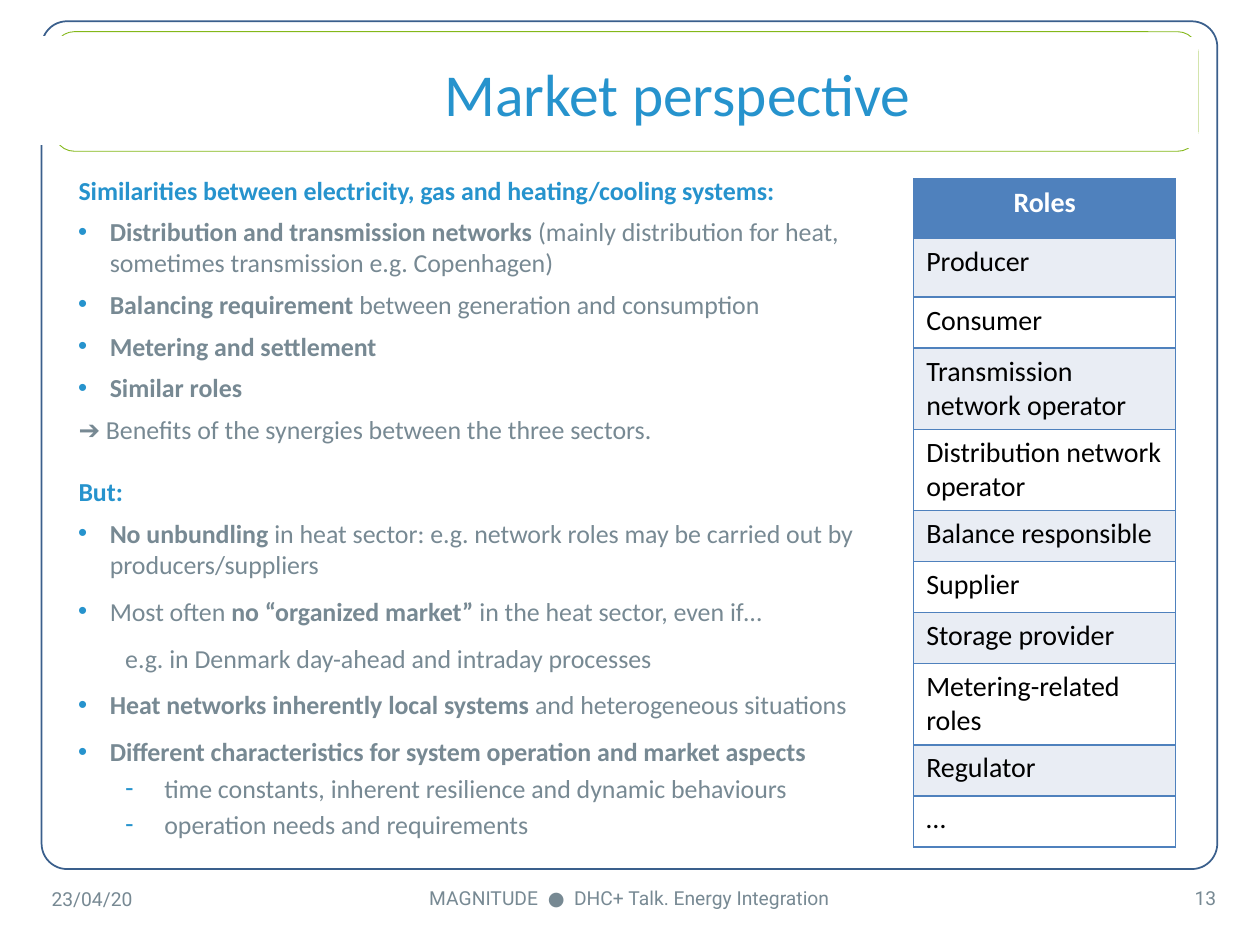
"""Build the market perspective slide with its role table."""
from dataclasses import dataclass

from lxml import etree
from pptx import Presentation
from pptx.dml.color import RGBColor
from pptx.enum.shapes import MSO_SHAPE
from pptx.enum.text import MSO_ANCHOR, MSO_AUTO_SIZE, PP_ALIGN
from pptx.oxml.ns import qn
from pptx.util import Cm, Pt

LEFT, CENTER, RIGHT = PP_ALIGN.LEFT, PP_ALIGN.CENTER, PP_ALIGN.RIGHT
MIDDLE, NO_FIT = MSO_ANCHOR.MIDDLE, MSO_AUTO_SIZE.NONE
RECT, ROUND = MSO_SHAPE.RECTANGLE, MSO_SHAPE.ROUNDED_RECTANGLE


@dataclass(frozen=True)
class Theme:
    """Colours, fonts and type sizes of the slide."""
    blue: str = "2693CD"
    grey: str = "778993"
    white: str = "FFFFFF"
    black: str = "000000"
    green: str = "84B819"
    navy: str = "3A5F8C"
    head: str = "4F81BD"
    band: str = "E9EDF4"
    main: str = "Calibri"
    small: str = "Roboto"
    title_size: float = 34
    body_size: float = 14.8
    cell_size: float = 16
    foot_size: float = 11


@dataclass(frozen=True)
class Box:
    """Place and size in centimetres."""
    left: float
    top: float
    width: float
    height: float

    def emu(self) -> tuple:
        return Cm(self.left), Cm(self.top), Cm(self.width), Cm(self.height)


@dataclass(frozen=True)
class Frame:
    """An outlined panel behind the text."""
    shape: int
    box: Box
    line: str
    weight: float
    fill: str = ""
    curve: float = 0.17


@dataclass(frozen=True)
class Style:
    """Indent, bullet and colour of a list line."""
    margin: float
    indent: float = 0
    mark: str = ""
    level: int = 0
    color: str = Theme.grey


@dataclass(frozen=True)
class Item:
    """A list line with an optional bold part in the middle."""
    style: Style
    gap: float
    lead: str = ""
    bold: str = ""
    rest: str = ""


@dataclass(frozen=True)
class Note:
    """A small text at the foot of the slide."""
    text: str
    box: Box
    align: int


THEME = Theme()
HEAD = Style(0.33, color=THEME.blue)
PLAIN = Style(0.33)
POINT = Style(0.96, -0.64, "•")
ASIDE = Style(1.27, level=1)
DASH = Style(2.06, -0.79, "-", 1)

FRAMES = [
    Frame(ROUND, Box(1.09, 0.64, 23.06, 2.41), THEME.green, 0.5, THEME.white),
    Frame(ROUND, Box(0.84, 0.43, 23.7, 17.09), THEME.navy, 1, curve=0.03),
    Frame(RECT, Box(0.28, 0.76, 1.19, 2.13), THEME.white, 2, THEME.white),
]
ITEMS = [
    Item(HEAD, 0, bold="Similarities between electricity, gas and heating/cooling systems:"),
    Item(POINT, 6, bold="Distribution and transmission networks ",
         rest="(mainly distribution for heat, sometimes transmission e.g. Copenhagen)"),
    Item(POINT, 6, bold="Balancing requirement ", rest="between generation and consumption"),
    Item(POINT, 6, bold="Metering and settlement"),
    Item(POINT, 6, bold="Similar roles"),
    Item(PLAIN, 6, "➔ Benefits of the synergies between the three sectors."),
    Item(HEAD, 18, bold="But:"),
    Item(POINT, 6, bold="No unbundling ",
         rest="in heat sector: e.g. network roles may be carried out by producers/suppliers"),
    Item(POINT, 9, "Most often ", "no “organized market” ", "in the heat sector, even if…"),
    Item(ASIDE, 9, "e.g. in Denmark day-ahead and intraday processes"),
    Item(POINT, 9, bold="Heat networks inherently local systems ",
         rest="and heterogeneous situations"),
    Item(POINT, 9, bold="Different characteristics for system operation and market aspects"),
    Item(DASH, 3, "time constants, inherent resilience and dynamic behaviours"),
    Item(DASH, 3, "operation needs and requirements"),
]
TALL, LOW, DOUBLE = 1.19, 1.03, 1.63
ROLES = [
    ("Roles", TALL), ("Producer", TALL), ("Consumer", LOW),
    ("Transmission network operator", DOUBLE), ("Distribution network operator", DOUBLE),
    ("Balance responsible", LOW), ("Supplier", LOW), ("Storage provider", LOW),
    ("Metering-related roles", DOUBLE), ("Regulator", LOW), ("…", LOW),
]
NOTES = [
    Note("23/04/20", Box(0.79, 17.6, 3.18, 1.02), LEFT),
    Note("MAGNITUDE  ●  DHC+ Talk. Energy Integration", Box(7.24, 17.58, 10.9, 1.02), CENTER),
    Note("13", Box(21.39, 17.58, 3.38, 1.02), RIGHT),
]


def rgb(code: str) -> RGBColor:
    return RGBColor.from_string(code)


def set_font(run, face: str, size: float, color: str, bold: bool = False) -> None:
    font = run.font
    font.name, font.size, font.bold = face, Pt(size), bold
    font.color.rgb = rgb(color)


def paint(shape, fill: str, line: str, weight: float) -> None:
    if fill:
        shape.fill.solid()
        shape.fill.fore_color.rgb = rgb(fill)
    else:
        shape.fill.background()
    shape.line.color.rgb = rgb(line)
    shape.line.width = Pt(weight)


def draw_frame(slide, frame: Frame) -> None:
    shape = slide.shapes.add_shape(frame.shape, *frame.box.emu())
    shape.shadow.inherit = False
    if frame.shape == ROUND:
        shape.adjustments[0] = frame.curve
    paint(shape, frame.fill, frame.line, frame.weight)


def place(holder, box: Box, curve: float) -> None:
    """Move a placeholder to the front and round its corners."""
    holder.left, holder.top, holder.width, holder.height = box.emu()
    shape = etree.SubElement(holder.element.spPr, qn("a:prstGeom"), prst="roundRect")
    guides = etree.SubElement(shape, qn("a:avLst"))
    etree.SubElement(guides, qn("a:gd"), name="adj", fmla=f"val {round(curve * 100000)}")
    holder.element.getparent().append(holder.element)
    holder.text_frame.auto_size = NO_FIT


def set_mark(para, style: Style) -> None:
    props = para._p.get_or_add_pPr()
    props.set("marL", str(Cm(style.margin)))
    props.set("indent", str(Cm(style.indent)))
    if style.mark:
        tint = etree.SubElement(props, qn("a:buClr"))
        etree.SubElement(tint, qn("a:srgbClr"), val=THEME.blue)
        etree.SubElement(props, qn("a:buChar"), char=style.mark)
    else:
        etree.SubElement(props, qn("a:buNone"))


def write_item(para, item: Item) -> None:
    para.level = item.style.level
    para.space_before = Pt(item.gap)
    set_mark(para, item.style)
    for text, bold in ((item.lead, False), (item.bold, True), (item.rest, False)):
        if text:
            run = para.add_run()
            run.text = text
            set_font(run, THEME.main, THEME.body_size, item.style.color, bold)


def draw_cell(cell, text: str, index: int) -> None:
    top = index == 0
    cell.text = text
    para = cell.text_frame.paragraphs[0]
    para.alignment = CENTER if top else LEFT
    set_font(para.runs[0], THEME.main, THEME.cell_size, THEME.white if top else THEME.black, top)
    props = cell._tc.get_or_add_tcPr()
    for side in ("lnL", "lnR", "lnT", "lnB"):
        edge = etree.SubElement(props, qn(f"a:{side}"), w=str(Pt(1)))
        fill = etree.SubElement(edge, qn("a:solidFill"))
        etree.SubElement(fill, qn("a:srgbClr"), val=THEME.head)
    cell.fill.solid()
    band = THEME.band if index % 2 else THEME.white
    cell.fill.fore_color.rgb = rgb(THEME.head if top else band)


def draw_roles(slide) -> None:
    box = Box(18.42, 3.61, 5.28, sum(height for _, height in ROLES))
    table = slide.shapes.add_table(len(ROLES), 1, *box.emu()).table
    table.horz_banding = False
    for index, (text, height) in enumerate(ROLES):
        table.rows[index].height = Cm(height)
        draw_cell(table.cell(index, 0), text, index)


def draw_note(slide, note: Note) -> None:
    frame = slide.shapes.add_textbox(*note.box.emu()).text_frame
    frame.word_wrap, frame.vertical_anchor = True, MIDDLE
    frame.text = note.text
    para = frame.paragraphs[0]
    para.alignment = note.align
    set_font(para.runs[0], THEME.small, THEME.foot_size, THEME.grey)


def main() -> None:
    deck = Presentation()
    deck.slide_width, deck.slide_height = Cm(25.4), Cm(19.05)
    slide = deck.slides.add_slide(deck.slide_layouts[1])
    title, body = slide.shapes.title, slide.placeholders[1]
    for frame in FRAMES:
        draw_frame(slide, frame)

    place(body, Box(0.79, 3.18, 17.37, 14.4), 0.05)
    for index, item in enumerate(ITEMS):
        frame = body.text_frame
        write_item(frame.add_paragraph() if index else frame.paragraphs[0], item)

    place(title, Box(3.18, 0.76, 20.96, 2.21), 0.17)
    paint(title, THEME.white, THEME.white, 1)
    title.text_frame.text = "Market perspective"
    title.text_frame.vertical_anchor = MIDDLE
    para = title.text_frame.paragraphs[0]
    para.alignment = CENTER
    set_font(para.runs[0], THEME.main, THEME.title_size, THEME.blue)

    draw_roles(slide)
    for note in NOTES:
        draw_note(slide, note)
    deck.save("out.pptx")


if __name__ == "__main__":
    main()
